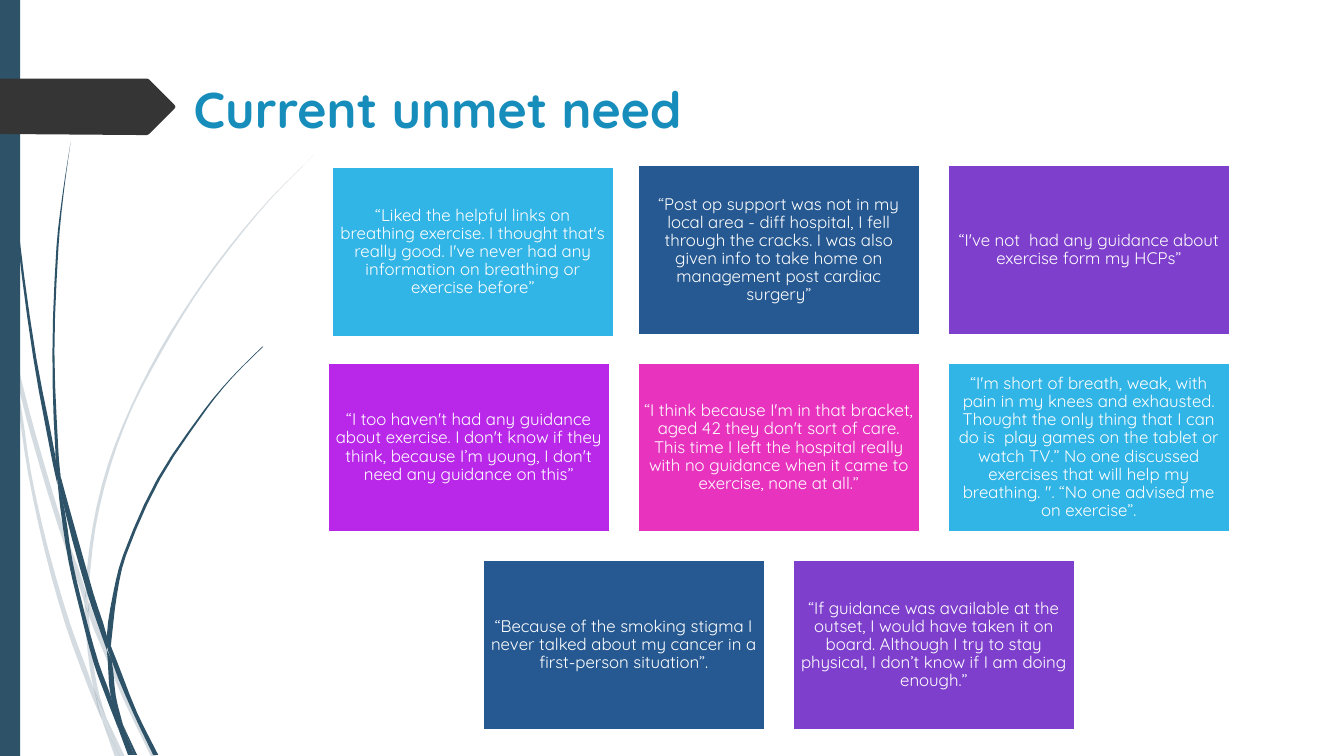
from lxml.etree import SubElement
from pptx import Presentation
from pptx.dml.color import RGBColor
from pptx.enum.shapes import MSO_SHAPE
from pptx.enum.text import MSO_ANCHOR, MSO_AUTO_SIZE, PP_ALIGN
from pptx.oxml.ns import qn
from pptx.util import Inches, Pt

FONT = "Quicksand"
WHITE = RGBColor(0xFF, 0xFF, 0xFF)
SLATE = RGBColor(0x2E, 0x53, 0x69)
CHAR = RGBColor(0x35, 0x35, 0x35)
TEAL = RGBColor(0x17, 0x8D, 0xBB)
SKY = RGBColor(0x31, 0xB4, 0xE6)
NAVY = RGBColor(0x26, 0x59, 0x91)
VIOLET = RGBColor(0x7E, 0x40, 0xCC)
PURPLE = RGBColor(0xB9, 0x27, 0xE9)
PINK = RGBColor(0xE8, 0x33, 0xBF)

TITLE = "Current unmet need"
QUOTES = [
    [
        (SKY, "“Liked the helpful links on breathing exercise. I thought that's "
              "really good. I've never had any information on breathing or "
              "exercise before”"),
        (NAVY, "“Post op support was not in my local area - diff hospital, I "
               "fell through the cracks. I was also given info to take home on "
               "management post cardiac surgery”"),
        (VIOLET, "“I've not  had any guidance about exercise form my HCPs”"),
    ],
    [
        (PURPLE, "“I too haven't had any guidance about exercise. I don't know "
                 "if they think, because I’m young, I don't need any guidance "
                 "on this”"),
        (PINK, "“I think because I'm in that bracket, aged 42 they don't sort "
               "of care. This time I left the hospital really with no guidance "
               "when it came to exercise, none at all.”"),
        (SKY, "“I'm short of breath, weak, with pain in my knees and exhausted. "
              "Thought the only thing that I can do is  play games on the "
              "tablet or watch TV.” No one discussed exercises that will help "
              "my breathing. \". “No one advised me on exercise”."),
    ],
    [
        (NAVY, "“Because of the smoking stigma I never talked about my cancer "
               "in a first-person situation”."),
        (VIOLET, "“If guidance was available at the outset, I would have taken "
                 "it on board. Although I try to stay physical, I don’t know "
                 "if I am doing enough.”"),
    ],
]
NUDGE = {(0, 0): (0.04, 0.02)}  # first card sits slightly off the grid

# Grass blades, top to bottom: (y, left edge, right edge)
PALE = [
    [(2.82, 0, 0), (2.99, 0, 0.04), (3.22, 0.05, 0.09), (3.5, 0.11, 0.11)],
    [(3.45, 0.14, 0.14), (3.76, 0.17, 0.21), (4.33, 0.31, 0.36),
     (5.2, 0.57, 0.62), (5.86, 0.8, 0.85), (5.99, 0.84, 0.84)],
    [(5.96, 0.88, 0.88), (6.1, 0.88, 0.93), (6.5, 1.04, 1.09),
     (6.93, 1.22, 1.27), (7.51, 1.5, 1.55)],
    [(7.11, 1.05, 1.05), (7.51, 1.19, 1.24)],
    [(3.5, 0.11, 0.11), (4.1, 0.19, 0.22), (4.7, 0.28, 0.31),
     (5.45, 0.44, 0.48), (6.2, 0.65, 0.7), (6.83, 0.88, 0.93),
     (7.14, 1.01, 1.01)],
    [(5.99, 0.84, 0.84), (6.1, 0.84, 0.88), (6.46, 0.87, 0.91),
     (6.83, 0.93, 0.97), (7.11, 1.05, 1.05)],
    [(1.53, 3.12, 3.12), (1.97, 2.68, 2.69), (2.44, 2.28, 2.3),
     (2.95, 1.91, 1.93), (3.48, 1.58, 1.61), (4.03, 1.3, 1.32),
     (4.61, 1.07, 1.1), (5.22, 0.92, 0.95), (5.84, 0.85, 0.88),
     (5.96, 0.88, 0.88)],
    [(7.14, 1.01, 1.01), (7.51, 1.14, 1.19)],
    [(5.86, 0.85, 0.85), (5.99, 0.84, 0.88), (6.1, 0.88, 0.88)],
    [(6.83, 0.93, 0.93), (7.11, 1.0, 1.05), (7.51, 1.19, 1.19)],
]
DARK = [
    [(0, 0.03, 0.04), (1.1, 0.07, 0.08), (2.33, 0.17, 0.19),
     (3.55, 0.33, 0.36), (4.53, 0.51, 0.55), (4.81, 0.57, 0.57)],
    [(4.72, 0.6, 0.6), (5.05, 0.64, 0.69), (5.9, 0.87, 0.93),
     (6.31, 1.01, 1.06), (6.45, 1.06, 1.06)],
    [(6.41, 1.1, 1.1), (6.56, 1.11, 1.16), (7.07, 1.32, 1.36),
     (7.49, 1.52, 1.57)],
    [(4.77, 0.57, 0.57), (5.05, 0.6, 0.64), (5.57, 0.68, 0.72),
     (6.08, 0.8, 0.84), (6.58, 0.93, 0.98), (6.91, 1.05, 1.1),
     (7.22, 1.17, 1.17)],
    [(1.41, 0.7, 0.7), (1.93, 0.62, 0.63), (2.45, 0.56, 0.58),
     (3.49, 0.52, 0.54), (4.49, 0.55, 0.58), (4.72, 0.6, 0.6)],
    [(7.19, 1.22, 1.22), (7.49, 1.33, 1.36)],
    [(4.49, 0.55, 0.55), (4.72, 0.56, 0.6), (5.05, 0.64, 0.64)],
    [(3.44, 2.6, 2.61), (3.74, 2.3, 2.31), (4.06, 2.03, 2.05),
     (4.75, 1.56, 1.59), (5.51, 1.22, 1.25), (5.9, 1.12, 1.16),
     (6.31, 1.06, 1.11), (6.41, 1.1, 1.1)],
    [(7.22, 1.17, 1.17), (7.49, 1.27, 1.31)],
    [(6.45, 1.06, 1.06), (6.56, 1.07, 1.11), (6.91, 1.1, 1.15),
     (7.19, 1.22, 1.22)],
    [(6.31, 1.06, 1.06), (6.41, 1.06, 1.1), (6.56, 1.11, 1.11)],
    [(6.91, 1.1, 1.1), (7.19, 1.16, 1.22), (7.49, 1.3, 1.33)],
]
ARROW = [(0, 0.78), (1.46, 0.78), (1.48, 0.79), (1.73, 1.04), (1.74, 1.06),
         (1.73, 1.08), (1.48, 1.33), (1.46, 1.34), (1.36, 1.34), (0, 1.33)]

# Card grid
WIDE, HIGH = 2.8, 1.68
LEFT, RIGHT, TOP, STEP = 3.25, 9.4, 1.64, 1.96
PITCH = (RIGHT - LEFT) / 2

deck = Presentation()
deck.slide_width, deck.slide_height = Inches(13.33), Inches(7.5)
slide = deck.slides.add_slide(deck.slide_layouts[5])
shapes = slide.shapes


def paint(shape, fill, line=None, alpha=None):
    shape.shadow.inherit = False
    shape.fill.solid()
    shape.fill.fore_color.rgb = fill
    if alpha:
        tone = shape.fill._xPr.find(qn("a:solidFill"))[0]
        SubElement(tone, qn("a:alpha")).set("val", str(alpha * 1000))
    if line is None:
        shape.line.fill.background()
    else:
        shape.line.color.rgb = line
        shape.line.width = Pt(1.25)


def write(shape, text, size=12, color=WHITE, bold=False, align=PP_ALIGN.CENTER,
          anchor=MSO_ANCHOR.MIDDLE, inset=0.05, space=0.9, after=4.2):
    frame = shape.text_frame
    frame.word_wrap = True
    frame.auto_size = MSO_AUTO_SIZE.NONE
    frame.vertical_anchor = anchor
    frame.margin_left = frame.margin_right = Inches(inset)
    frame.margin_top = frame.margin_bottom = Inches(0.05)
    para = frame.paragraphs[0]
    para.alignment, para.line_spacing = align, space
    para.space_after = Pt(after)
    run = para.add_run()
    run.text = text
    font = run.font
    font.name, font.size, font.bold = FONT, Pt(size), bold
    font.color.rgb = color


def outline(points, fill, alpha=None):
    points = [(Inches(x), Inches(y)) for x, y in points]
    form = shapes.build_freeform(*points[0])
    form.add_line_segments(points[1:], close=True)
    paint(form.convert_to_shape(), fill, alpha=alpha)


def smooth(edge, parts=3):
    """Points along a cubic curve through the (x, y) points of an edge."""
    ends = [edge[0], *edge, edge[-1]]
    slopes = [(c[0] - a[0]) / (c[1] - a[1]) for a, c in zip(ends, ends[2:])]
    curve = []
    for (x, y), (u, v), m, n in zip(edge, edge[1:], slopes, slopes[1:]):
        h = v - y
        for t in (k / parts for k in range(parts)):
            bend = t * (1 - t) * ((1 - t) * (m * h - u + x)
                                  - t * (n * h - u + x))
            curve.append((x + t * (u - x) + bend, y + t * h))
    return curve + [edge[-1]]


# Grass blades
for blades, alpha in ((PALE, 20), (DARK, None)):
    for rows in blades:
        left = smooth([(x, y) for y, x, _ in rows])
        right = smooth([(x, y) for y, _, x in rows])
        outline(left + right[::-1], SLATE, alpha)

# Side bar and arrow tag
bar = shapes.add_shape(MSO_SHAPE.RECTANGLE, 0, 0, Inches(0.2), Inches(7.5))
paint(bar, SLATE)
outline(ARROW, CHAR)

# Title
title = shapes.title
title.left, title.top = Inches(1.82), Inches(0.72)
title.width, title.height = Inches(9.75), Inches(0.79)
write(title, TITLE, size=36, color=TEAL, bold=True, align=PP_ALIGN.LEFT,
      anchor=MSO_ANCHOR.TOP, inset=0.1, space=1.0, after=0)

# Quote cards, each row centred
for i, row in enumerate(QUOTES):
    start = LEFT + (3 - len(row)) * PITCH / 2
    for j, (fill, text) in enumerate(row):
        dx, dy = NUDGE.get((i, j), (0, 0))
        card = shapes.add_shape(
            MSO_SHAPE.RECTANGLE, Inches(start + j * PITCH + dx),
            Inches(TOP + i * STEP + dy), Inches(WIDE), Inches(HIGH))
        paint(card, fill, WHITE)
        write(card, text)

deck.save("out.pptx")
